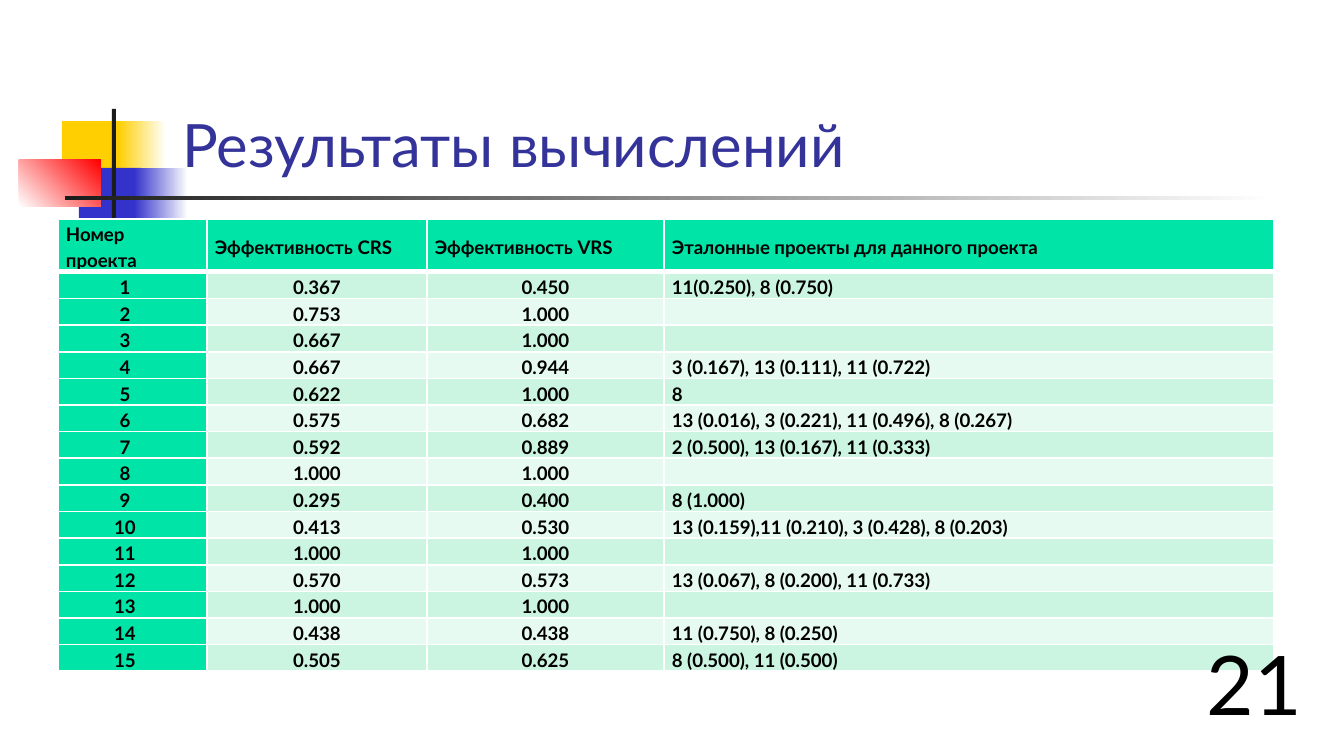
import lxml.etree
import pptx
import pptx.util
from pptx.dml.color import RGBColor
from pptx.enum.shapes import MSO_SHAPE
from pptx.enum.text import MSO_ANCHOR, MSO_AUTO_SIZE, PP_ALIGN
from pptx.oxml.ns import qn

EMU_PER_PX = 914400 / 134.4
FONT = "Lato"

WHITE = RGBColor(0xFF, 0xFF, 0xFF)
BLACK = RGBColor(0x00, 0x00, 0x00)
YELLOW = RGBColor(0xFF, 0xCF, 0x01)
BLUE = RGBColor(0x33, 0x33, 0xCC)
RED = RGBColor(0xFF, 0x00, 0x00)
CHARCOAL = RGBColor(0x1C, 0x1C, 0x1C)
TITLE_BLUE = RGBColor(0x33, 0x33, 0x99)
GREEN = RGBColor(0x00, 0xE4, 0xA8)
BANDS = (RGBColor(0xCC, 0xF5, 0xE1), RGBColor(0xE7, 0xFA, 0xF1))

# left, top, width, height, start colour, end colour, angle
DECORATION = [
    (62, 121, 65, 52, YELLOW, None, 0),
    (118, 121, 48, 52, YELLOW, WHITE, 0),
    (79, 168, 62, 52, BLUE, None, 0),
    (134, 168, 54, 52, BLUE, WHITE, 0),
    (19, 160, 82, 47, WHITE, RED, 45),
    (112, 109, 4, 116, CHARCOAL, None, 0),
    (65, 196, 1210, 4, CHARCOAL, WHITE, 0),
]

COLUMN_WIDTHS = (149, 220, 237, 610)
HEADER_HEIGHT = 53
TABLE_HEIGHT = 453
HEADERS = ("Номер проекта", "Эффективность CRS", "Эффективность VRS",
           "Эталонные проекты для данного проекта")
RESULTS = [
    ("0.367", "0.450", "11(0.250), 8 (0.750)"),
    ("0.753", "1.000", ""),
    ("0.667", "1.000", ""),
    ("0.667", "0.944", "3 (0.167), 13 (0.111), 11 (0.722)"),
    ("0.622", "1.000", "8"),
    ("0.575", "0.682", "13 (0.016), 3 (0.221), 11 (0.496), 8 (0.267)"),
    ("0.592", "0.889", "2 (0.500), 13 (0.167), 11 (0.333)"),
    ("1.000", "1.000", ""),
    ("0.295", "0.400", "8 (1.000)"),
    ("0.413", "0.530", "13 (0.159),11 (0.210), 3 (0.428), 8 (0.203)"),
    ("1.000", "1.000", ""),
    ("0.570", "0.573", "13 (0.067), 8 (0.200), 11 (0.733)"),
    ("1.000", "1.000", ""),
    ("0.438", "0.438", "11 (0.750), 8 (0.250)"),
    ("0.505", "0.625", "8 (0.500), 11 (0.500)"),
]


def px(n):
    return pptx.util.Emu(round(n * EMU_PER_PX))


def write(tf, text, size, color, align, bold=False):
    p = tf.paragraphs[0]
    p.alignment = align
    p.font.name = FONT
    p.font.size = pptx.util.Pt(size)
    p.font.bold = bold
    p.font.color.rgb = color
    if text:
        p.add_run().text = text
    else:
        # An empty cell takes its line height from the end-of-paragraph mark.
        p._p.get_or_add_endParaRPr().set("sz", str(size * 100))
    return p


def add_block(s, left, top, width, height, start, end, angle):
    """Add a borderless rectangle, solid when there is no end colour."""
    sp = s.shapes.add_shape(MSO_SHAPE.RECTANGLE,
                            px(left), px(top), px(width), px(height))
    sp.shadow.inherit = False
    sp.line.fill.background()
    if end is None:
        sp.fill.solid()
        sp.fill.fore_color.rgb = start
        return
    sp.fill.gradient()
    sp.fill.gradient_angle = angle
    for stop, color in zip(sp.fill.gradient_stops, (start, end)):
        stop.color.rgb = color


def set_title(s, text):
    sp = s.shapes.title
    sp.left, sp.top, sp.width, sp.height = px(169), px(93), px(1145), px(93)
    sp.text_frame.vertical_anchor = MSO_ANCHOR.BOTTOM
    write(sp.text_frame, text, 32, TITLE_BLUE, PP_ALIGN.LEFT)


def set_borders(cell, top, bottom):
    """Draw white borders; top and bottom are widths in points."""
    tcPr = cell._tc.get_or_add_tcPr()
    for side, width in (("L", 1), ("R", 1), ("T", top), ("B", bottom)):
        ln = lxml.etree.SubElement(tcPr, qn("a:ln" + side),
                                   w=str(pptx.util.Pt(width)))
        fill = lxml.etree.SubElement(ln, qn("a:solidFill"))
        lxml.etree.SubElement(fill, qn("a:srgbClr"), val=str(WHITE))


def cell_align(row, col):
    if row == 0:
        return PP_ALIGN.JUSTIFY if col == 0 else PP_ALIGN.LEFT
    return PP_ALIGN.LEFT if col == 3 else PP_ALIGN.CENTER


def format_cell(cell, row, col, text):
    is_header = row == 0
    set_borders(cell, 3 if row == 1 else 1, 3 if is_header else 1)
    cell.fill.solid()
    cell.fill.fore_color.rgb = (
        GREEN if is_header or col == 0 else BANDS[(row - 1) % 2])
    cell.vertical_anchor = MSO_ANCHOR.MIDDLE if is_header else MSO_ANCHOR.BOTTOM
    cell.margin_left = px(8)
    cell.margin_right = px(23 if col == 0 and not is_header else 8)
    cell.margin_top = cell.margin_bottom = 0
    p = write(cell.text_frame, text, 10, BLACK, cell_align(row, col), bold=True)
    p.line_spacing = 1.15


def add_results_table(s):
    rows = [HEADERS] + [(str(i), *r) for i, r in enumerate(RESULTS, 1)]
    table = s.shapes.add_table(len(rows), len(HEADERS), px(58), px(219),
                               px(sum(COLUMN_WIDTHS)), px(TABLE_HEIGHT)).table
    table.first_row = table.horz_banding = False
    for column, width in zip(table.columns, COLUMN_WIDTHS):
        column.width = px(width)
    row_height = (TABLE_HEIGHT - HEADER_HEIGHT) / len(RESULTS)
    for i, row in enumerate(rows):
        table.rows[i].height = px(row_height if i else HEADER_HEIGHT)
        for j, text in enumerate(row):
            format_cell(table.cell(i, j), i, j, text)


def add_page_number(s, number):
    tf = s.shapes.add_textbox(px(1035), px(688), px(280), px(51)).text_frame
    tf.word_wrap = True
    tf.auto_size = MSO_AUTO_SIZE.NONE
    tf.vertical_anchor = MSO_ANCHOR.BOTTOM
    write(tf, number, 44, BLACK, PP_ALIGN.RIGHT)


def main():
    prs = pptx.Presentation()
    prs.slide_width, prs.slide_height = px(1344), px(756)
    s = prs.slides.add_slide(prs.slide_layouts[5])
    for block in DECORATION:
        add_block(s, *block)
    set_title(s, "Результаты вычислений")
    add_results_table(s)
    add_page_number(s, "21")
    prs.save("out.pptx")


if __name__ == "__main__":
    main()
